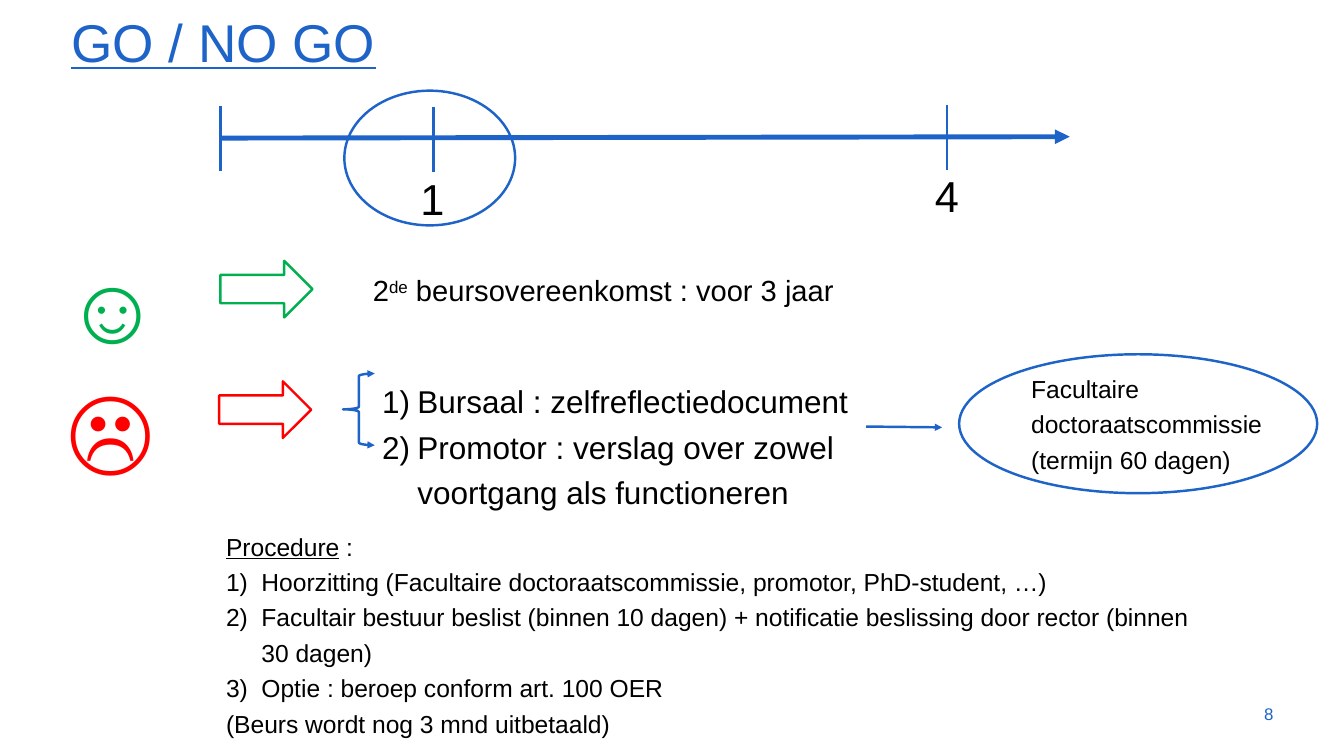
from pptx import Presentation
from pptx.dml.color import RGBColor
from pptx.enum.shapes import MSO_CONNECTOR, MSO_SHAPE
from pptx.enum.text import MSO_ANCHOR, PP_ALIGN
from pptx.oxml.ns import qn
from pptx.util import Cm, Pt
from lxml.etree import SubElement

COLORS = {"blue": "1E64C8", "black": "000000", "green": "00B050", "red": "FF0000"}
FONT = "Arial"
INDENT = Cm(1.27)


def rgb(name):
    return RGBColor.from_string(COLORS[name])


def style_line(shape, color, width, ends=()):
    shape.line.color.rgb = rgb(color)
    shape.line.width = Pt(width)
    ln = shape._element.spPr.find(qn("a:ln"))
    for end in ends:
        SubElement(ln, qn(f"a:{end}"), type="triangle")


def add_line(s, x1, y1, x2, y2, width=2.5, ends=()):
    line = s.shapes.add_connector(MSO_CONNECTOR.STRAIGHT, Cm(x1), Cm(y1), Cm(x2), Cm(y2))
    style_line(line, "blue", width, ends)
    SubElement(line._element.spPr, qn("a:effectLst"))


def add_outline(s, kind, x, y, w, h, color="blue", ends=()):
    sp = s.shapes.add_shape(kind, Cm(x), Cm(y), Cm(w), Cm(h))
    sp.shadow.inherit = False
    sp.fill.background()
    style_line(sp, color, 2.5, ends)


def number_paragraph(p):
    pPr = p._p.get_or_add_pPr()
    pPr.set("marL", str(INDENT))
    pPr.set("indent", str(-INDENT))
    SubElement(pPr, qn("a:buFont"), typeface="+mj-lt")
    SubElement(pPr, qn("a:buAutoNum"), type="arabicParenR")


def add_text(s, x, y, w, h, lines, size, color="black", align=PP_ALIGN.LEFT,
             anchor=MSO_ANCHOR.TOP, spacing=1.2, numbered=()):
    tf = s.shapes.add_textbox(Cm(x), Cm(y), Cm(w), Cm(h)).text_frame
    tf.word_wrap = True
    tf.vertical_anchor = anchor
    for i, line in enumerate(lines):
        p = tf.paragraphs[0] if i == 0 else tf.add_paragraph()
        p.alignment = align
        p.line_spacing = spacing
        if i in numbered:
            number_paragraph(p)
        for part in line if isinstance(line, tuple) else (line,):
            r = p.add_run()
            r.text = part
            r.font.name = FONT
            r.font.size = Pt(size)
            r.font.color.rgb = rgb(color)
    return tf


def add_timeline(s):
    add_line(s, 7.9, 4.95, 38.33, 4.9, 5, ["tailEnd"])
    for x, y in ((7.9, 3.81), (15.54, 3.84), (33.93, 3.78)):
        add_line(s, x, y, x, y + 2.31)
    for x, y, w, year in ((14.48, 5.66, 2.03, "1"), (33.02, 5.56, 1.83, "4")):
        add_text(s, x, y, w, 2.31, [year], 44, align=PP_ALIGN.CENTER)
    add_outline(s, MSO_SHAPE.OVAL, 12.34, 3.25, 6.12, 4.83)


def add_outcome(s, face, color, face_x, face_y, arrow_x, arrow_y):
    add_text(s, face_x, face_y, 4.39, 4.72, [face], 96, color, PP_ALIGN.CENTER)
    add_outline(s, MSO_SHAPE.RIGHT_ARROW, arrow_x, arrow_y, 3.3, 2.03, color)


def main():
    prs = Presentation()
    prs.slide_width, prs.slide_height = Cm(48.16), Cm(27.1)
    s = prs.slides.add_slide(prs.slide_layouts[6])

    title = add_text(s, 2.31, 0.38, 43.64, 2.39, ["GO / NO GO"], 54, "blue",
                     anchor=MSO_ANCHOR.BOTTOM, spacing=0.9)
    title.paragraphs[0].runs[0].font.underline = True
    add_timeline(s)

    add_outcome(s, "☺", "green", 1.85, 7.98, 7.9, 9.35)
    grant = add_text(s, 13.11, 9.4, 17.42, 2.79,
                     [("2", "de", " beursovereenkomst : voor 3 jaar")], 29.6)
    grant.paragraphs[0].runs[1].font._element.set("baseline", "30000")

    add_outcome(s, "☹", "red", 1.78, 12.29, 7.85, 13.67)
    add_text(s, 13.44, 13.31, 17.55, 5.18,
             ["Bursaal : zelfreflectiedocument",
              "Promotor : verslag over zowel voortgang als functioneren"],
             32, numbered=(0, 1))
    add_outline(s, MSO_SHAPE.LEFT_BRACE, 12.29, 13.39, 1.14, 2.57,
                ends=["headEnd", "tailEnd"])
    add_line(s, 31.04, 15.29, 33.76, 15.32, ends=["tailEnd"])
    add_outline(s, MSO_SHAPE.OVAL, 34.37, 12.7, 12.83, 4.98)
    add_text(s, 36.7, 13.06, 9.91, 3.99,
             ["Facultaire doctoraatscommissie", "(termijn 60 dagen)"], 25)

    procedure = add_text(
        s, 7.85, 18.72, 35.61, 7.95,
        [("Procedure", " :"),
         "Hoorzitting (Facultaire doctoraatscommissie, promotor, PhD-student, …)",
         "Facultair bestuur beslist (binnen 10 dagen) + notificatie beslissing "
         "door rector (binnen 30 dagen)",
         "Optie : beroep conform art. 100 OER",
         "(Beurs wordt nog 3 mnd uitbetaald)"],
        25, numbered=(1, 2, 3))
    procedure.paragraphs[0].runs[0].font.underline = True
    add_text(s, 43.31, 24.87, 2.57, 1.45, ["8"], 17.1, "blue", PP_ALIGN.RIGHT,
             MSO_ANCHOR.MIDDLE, 1.0)
    prs.save("out.pptx")


if __name__ == "__main__":
    main()
